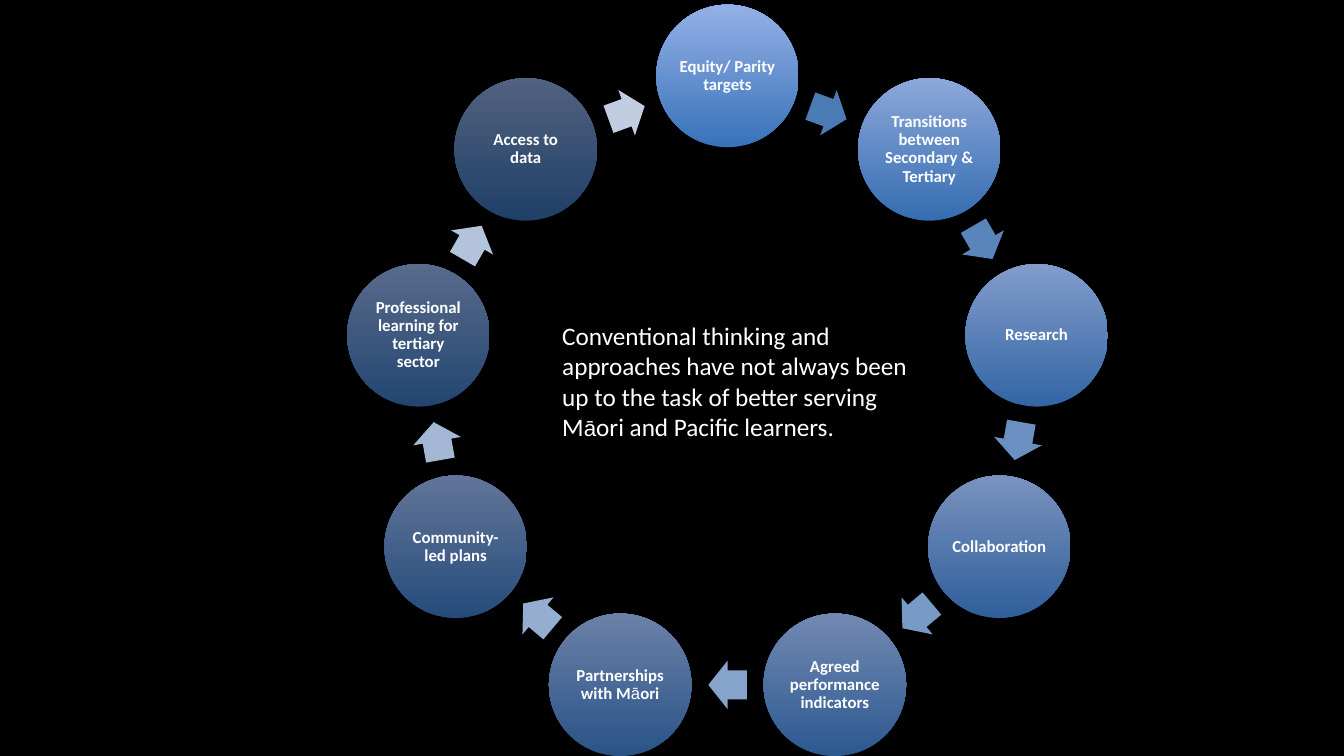
import math
from dataclasses import dataclass

from pptx import Presentation
from pptx.dml.color import RGBColor
from pptx.enum import shapes, text
from pptx.oxml import ns
from pptx.util import Cm, Pt


@dataclass(frozen=True)
class Theme:
    background: str = "000000"
    ink: str = "FFFFFF"
    node_bottom: str = "3F7FCE"
    node_top: str = "A4C4FF"
    arrow_first: str = "4B7BB5"
    arrow_last: str = "C2CDE1"
    font: str = "Calibri"
    macron_font: str = "Arial"
    node_size: int = 12
    message_size: int = 18
    message_macron_size: int = 16


THEME = Theme()
MACRON = "ā"
STEPS = [
    "Equity/ Parity targets",
    "Transitions between Secondary & Tertiary",
    "Research",
    "Collaboration",
    "Agreed performance indicators",
    "Partnerships with Māori",
    "Community-led plans",
    "Professional learning for tertiary sector",
    "Access to data",
]
MESSAGE = ("Conventional thinking and approaches have not always been "
           "up to the task of better serving Māori and Pacific learners.")


def blend(first, last, share):
    pairs = zip(RGBColor.from_string(first), RGBColor.from_string(last))
    return RGBColor(*(round(a + (b - a) * share) for a, b in pairs))


def write(frame, words, *, size, macron_size=None, bold=False, align=None,
          anchor=text.MSO_ANCHOR.TOP, inset=None, line_spacing=None, space_after=None):
    """Write one paragraph, with the macron letter in its own font."""
    frame.word_wrap = True
    frame.vertical_anchor = anchor
    if inset is not None:
        frame.margin_left = frame.margin_right = inset
        frame.margin_top = frame.margin_bottom = inset
    paragraph = frame.paragraphs[0]
    paragraph.alignment = align
    paragraph.line_spacing = line_spacing
    paragraph.space_after = space_after
    before, macron, after = words.partition(MACRON)
    for part in filter(None, (before, macron, after)):
        run = paragraph.add_run()
        run.text = part
        special = part == MACRON
        run.font.name = THEME.macron_font if special else THEME.font
        run.font.size = Pt(macron_size if special and macron_size else size)
        run.font.bold = bold and not special
        run.font.color.rgb = RGBColor.from_string(THEME.ink)


def add_centred(slide, kind, x, y, width, height):
    shape = slide.shapes.add_shape(
        kind, Cm(x - width / 2), Cm(y - height / 2), Cm(width), Cm(height))
    shape.shadow.inherit = False
    shape.line.fill.background()
    return shape


def add_node(slide, words, x, y, diameter, opacity):
    node = add_centred(slide, shapes.MSO_SHAPE.OVAL, x, y, diameter, diameter)
    node.fill.gradient()
    node.fill.gradient_angle = 90
    for stop, colour in zip(node.fill.gradient_stops, (THEME.node_bottom, THEME.node_top)):
        stop.color.rgb = RGBColor.from_string(colour)
    for colour in node.element.spPr.iter(ns.qn("a:srgbClr")):
        alpha = colour.makeelement(ns.qn("a:alpha"), {"val": str(opacity * 1000)})
        colour.append(alpha)
    write(node.text_frame, words, size=THEME.node_size, bold=True,
          align=text.PP_ALIGN.CENTER, anchor=text.MSO_ANCHOR.MIDDLE,
          inset=Cm(0.05), line_spacing=0.9, space_after=Pt(4.2))


def add_arrow(slide, x, y, rotation, colour):
    arrow = add_centred(slide, shapes.MSO_SHAPE.RIGHT_ARROW, x, y, 0.97, 1.22)
    arrow.adjustments[0] = 0.6
    arrow.adjustments[1] = 0.5
    arrow.rotation = rotation
    arrow.fill.solid()
    arrow.fill.fore_color.rgb = colour


def add_cycle(slide, left, top, radius, diameter):
    """Place the steps clockwise from the top, with an arrow after each."""
    centre_x = left + radius + diameter / 2
    centre_y = top + radius + diameter / 2
    turn = 360 / len(STEPS)

    def position(angle, distance):
        radians = math.radians(angle)
        return (centre_x + distance * math.sin(radians),
                centre_y - distance * math.cos(radians))

    arrow_radius = radius * math.cos(math.radians(turn / 2))
    for index, step in enumerate(STEPS):
        add_node(slide, step, *position(index * turn, radius), diameter, 90 - 5 * index)
        angle = (index + 0.5) * turn
        colour = blend(THEME.arrow_first, THEME.arrow_last, index / (len(STEPS) - 1))
        add_arrow(slide, *position(angle, arrow_radius), angle, colour)


def add_message(slide, left, top, width, height):
    box = slide.shapes.add_textbox(Cm(left), Cm(top), Cm(width), Cm(height))
    write(box.text_frame, MESSAGE, size=THEME.message_size,
          macron_size=THEME.message_macron_size)
    box.text_frame.auto_size = text.MSO_AUTO_SIZE.SHAPE_TO_FIT_TEXT


def main():
    presentation = Presentation()
    presentation.slide_width, presentation.slide_height = Cm(33.87), Cm(19.05)
    slide = presentation.slides.add_slide(presentation.slide_layouts[6])
    slide.background.fill.solid()
    slide.background.fill.fore_color.rgb = RGBColor.from_string(THEME.background)

    # Ring of steps
    add_cycle(slide, left=8.63, top=0.12, radius=7.91, diameter=3.59)
    # Message inside the ring
    add_message(slide, left=13.92, top=7.95, width=9.93, height=4.11)

    presentation.save("out.pptx")


if __name__ == "__main__":
    main()
